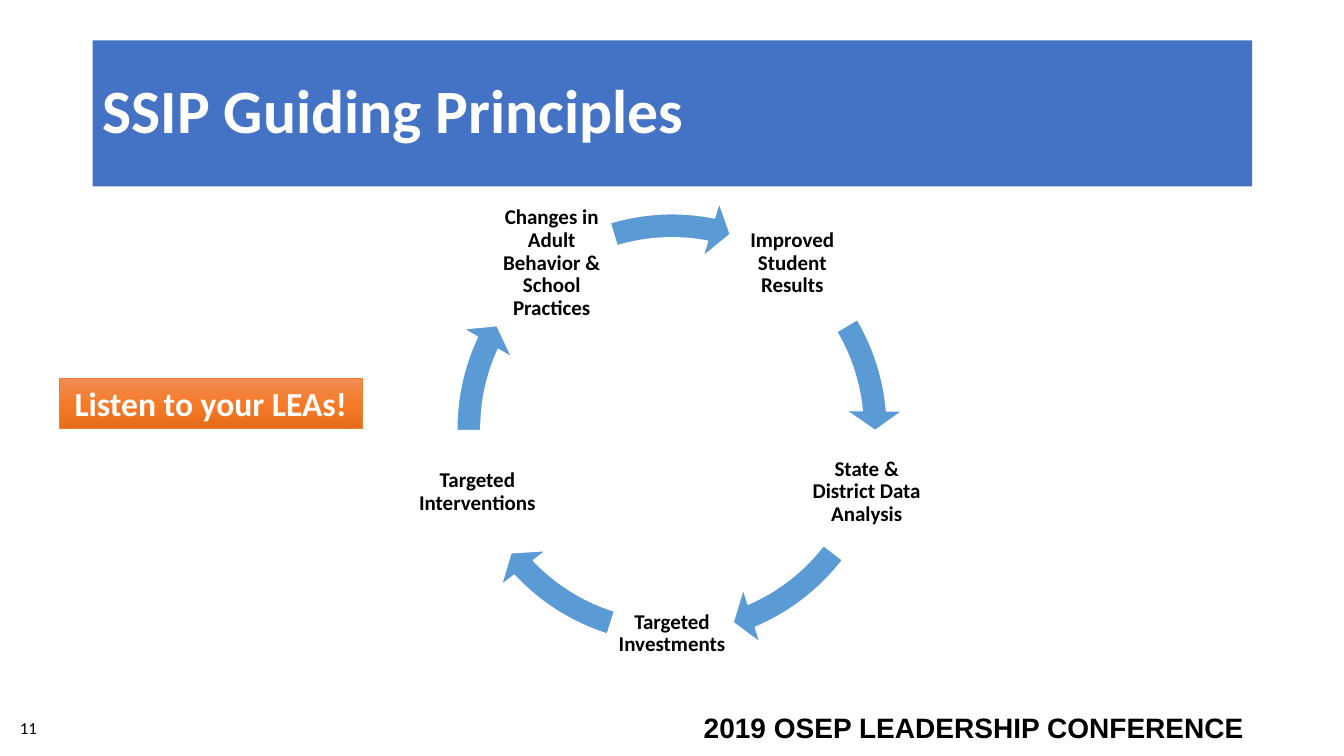
from copy import deepcopy
from dataclasses import dataclass
from math import cos, radians, sin

from pptx import Presentation
from pptx.dml.color import RGBColor
from pptx.enum.shapes import MSO_SHAPE
from pptx.enum.text import MSO_ANCHOR, PP_ALIGN
from pptx.oxml.ns import qn
from pptx.util import Inches, Pt


@dataclass(frozen=True)
class Theme:
    body_font: str = "Calibri"
    footer_font: str = "Arial"
    banner: str = "4472C4"
    arrow: str = "5B9BD5"
    callout_line: str = "ED7D31"
    callout_stops: tuple = ((0, "F18C57"), (0.5, "F67B28"), (1, "E56C19"))
    light: str = "FFFFFF"
    dark: str = "000000"
    title_size: int = 44
    callout_size: int = 24
    footer_size: int = 20
    step_size: int = 15
    number_size: int = 12


THEME = Theme()
WIDTH, HEIGHT = 13.33, 7.5

# Each step with the start and end angle of the arrow that leaves it
STEPS = (
    ("Improved Student Results", 329.45, 354.88),
    ("State & District Data Analysis", 37.57, 66.9),
    ("Targeted Investments", 107.5, 136.83),
    ("Targeted Interventions", 179.52, 204.95),
    ("Changes in Adult Behavior & School Practices", 253.32, 281.08),
)


def color(value):
    return RGBColor.from_string(value)


def write(shape, text, *, size, ink=THEME.dark, font=THEME.body_font, bold=True,
          align=PP_ALIGN.LEFT, anchor=MSO_ANCHOR.MIDDLE, spacing=None, inset=None):
    frame = shape.text_frame
    frame.word_wrap = True
    frame.vertical_anchor = anchor
    if inset is not None:
        frame.margin_left = frame.margin_right = Inches(inset)
        frame.margin_top = frame.margin_bottom = Inches(inset)
    para = frame.paragraphs[0]
    para.alignment = align
    if spacing:
        para.line_spacing = spacing
    span = para.add_run()
    span.text = text
    span.font.name, span.font.size, span.font.bold = font, Pt(size), bold
    span.font.color.rgb = color(ink)


def add_text(page, box, text, **style):
    shape = page.shapes.add_textbox(*map(Inches, box))
    write(shape, text, **style)


def add_block(page, kind, box, fill=None, line=None, line_width=1):
    shape = page.shapes.add_shape(kind, *map(Inches, box))
    shape.shadow.inherit = False
    if fill:
        shape.fill.solid()
        shape.fill.fore_color.rgb = color(fill)
    if line:
        shape.line.color.rgb = color(line)
        shape.line.width = Pt(line_width)
    else:
        shape.line.fill.background()
    return shape


def add_banner(page, box):
    banner = add_block(page, MSO_SHAPE.RECTANGLE, box, THEME.banner)
    write(banner, "SSIP Guiding Principles", size=THEME.title_size,
          ink=THEME.light, spacing=0.9)


def add_cycle(page, box):
    left, top, side, _ = box
    center_x, center_y = left + side / 2, top + side / 2
    radius, label = 2.03, 1.22
    turn = 360 / len(STEPS)
    for index, (text, start, end) in enumerate(STEPS):
        # Label, evenly spaced around the ring
        angle = radians(index * turn - 54)
        x = center_x + radius * cos(angle) - label / 2
        y = center_y + radius * sin(angle) - label / 2
        add_text(page, (x, y, label, label), text, size=THEME.step_size,
                 align=PP_ALIGN.CENTER, spacing=0.9, inset=0.02)
        # Arrow to the next label; angles are stored as 0.6 per degree
        arrow = add_block(page, MSO_SHAPE.CIRCULAR_ARROW, box, THEME.arrow, THEME.light)
        values = (5.2 / 100, 5.6 * 0.6, end * 0.6, start * 0.6, 6.1 / 100)
        for slot, value in enumerate(values):
            arrow.adjustments[slot] = value


def add_callout(page, box):
    callout = add_block(page, MSO_SHAPE.RECTANGLE, box, line=THEME.callout_line,
                        line_width=0.5)
    callout.fill.gradient()
    callout.fill.gradient_angle = 270
    # The default gradient has two stops; add the third
    stop_list = next(callout._element.iter(qn("a:gsLst")))
    stop_list.append(deepcopy(stop_list[-1]))
    for stop, (position, shade) in zip(callout.fill.gradient_stops, THEME.callout_stops):
        stop.position = position
        stop.color.rgb = color(shade)
    write(callout, "Listen to your LEAs!", size=THEME.callout_size,
          ink=THEME.light, align=PP_ALIGN.CENTER, anchor=MSO_ANCHOR.TOP)


def add_footer(page, box):
    left, top, width, height = box
    add_text(page, (left + width / 2, top, 5.77, height), "2019 OSEP LEADERSHIP CONFERENCE",
             size=THEME.footer_size, font=THEME.footer_font,
             align=PP_ALIGN.RIGHT, anchor=MSO_ANCHOR.TOP)
    add_text(page, (left + 0.1, top + 0.02, 3, 0.4), "11",
             size=THEME.number_size, bold=False)


def main():
    deck = Presentation()
    deck.slide_width, deck.slide_height = Inches(WIDTH), Inches(HEIGHT)
    page = deck.slides.add_slide(deck.slide_layouts[6])
    add_footer(page, (0, 7, WIDTH, 0.44))
    add_banner(page, (0.92, 0.4, 11.5, 1.45))
    add_cycle(page, (4.37, 1.96, 4.59, 4.59))
    add_callout(page, (0.59, 3.75, 3, 0.5))
    deck.save("out.pptx")


if __name__ == "__main__":
    main()
